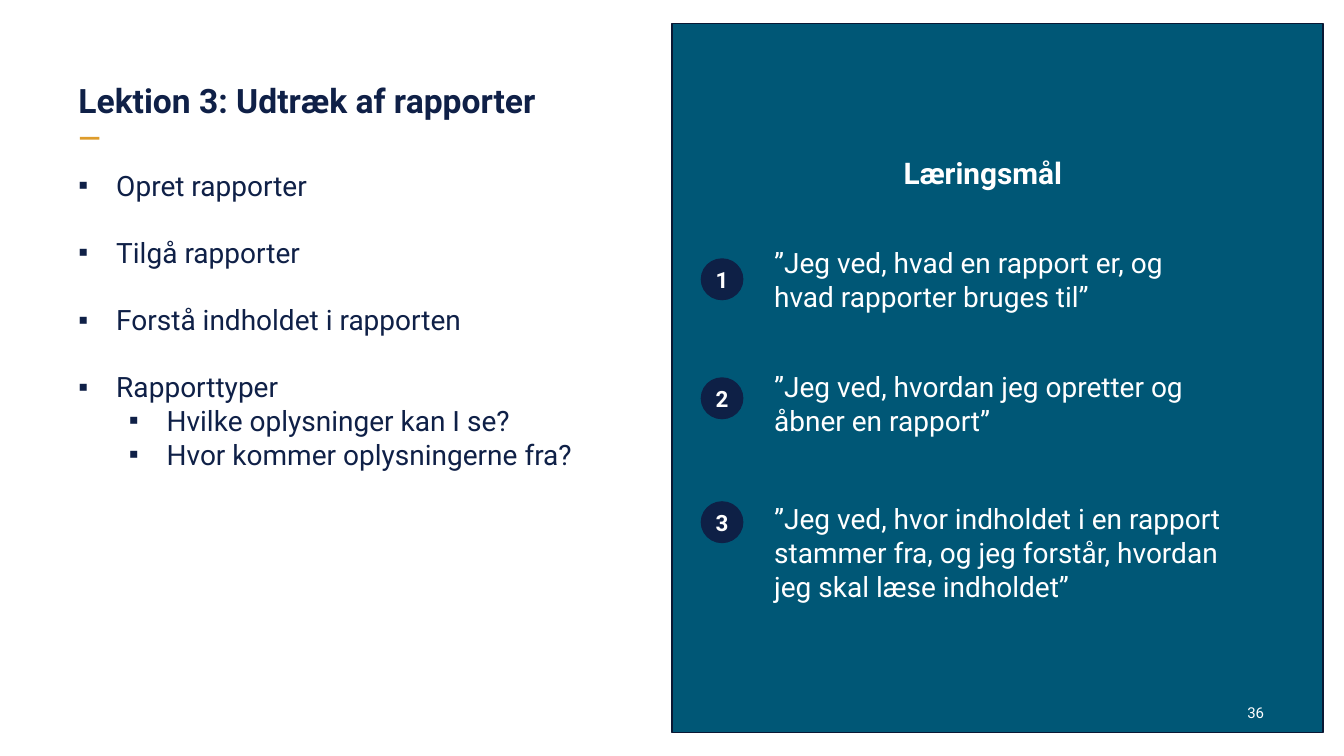
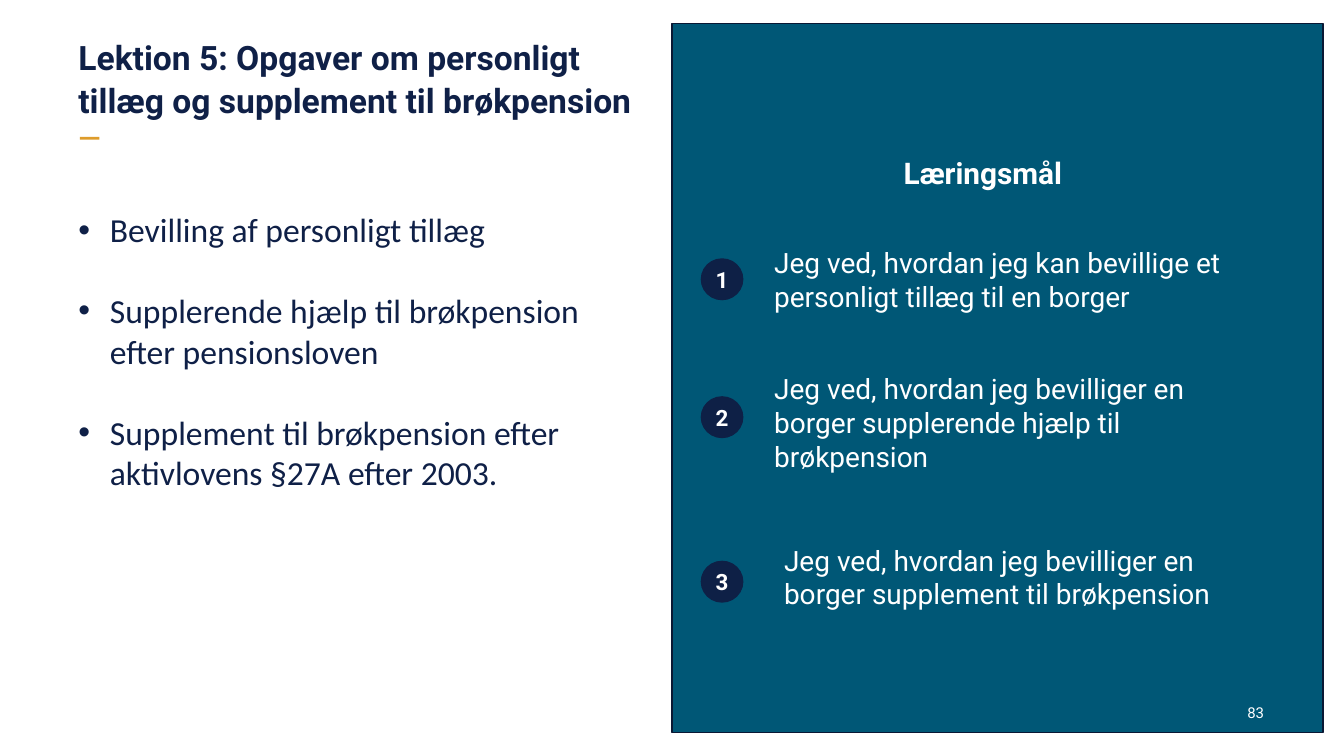
from lxml.etree import SubElement
from pptx import Presentation
from pptx.dml.color import RGBColor
from pptx.enum.shapes import MSO_SHAPE as SHAPE
from pptx.enum.text import MSO_ANCHOR as ANCHOR, MSO_AUTO_SIZE as AUTO, PP_ALIGN as ALIGN
from pptx.oxml.ns import qn
from pptx.util import Pt

NAVY, TEAL, GOLD, WHITE = "0F2047", "005776", "DE9C2B", "FFFFFF"
BADGE, PANEL_EDGE = "0E2046", "0A1834"

# Content: topics are (level, text); goals are (badge top, text left, text top, text)
SLIDES = [
    dict(
        title="Lektion 3: Udtræk af rapporter",
        number="36",
        list_top=120.2, list_font="Roboto", list_size=20, gap=24, bullet="▪", indent=27,
        topics=[
            (0, "Opret rapporter"),
            (0, "Tilgå rapporter"),
            (0, "Forstå indholdet i rapporten"),
            (0, "Rapporttyper"),
            (1, "Hvilke oplysninger kan I se?"),
            (1, "Hvor kommer oplysningerne fra?"),
        ],
        goals=[
            (185, 553, 175.7, "”Jeg ved, hvad en rapport er, og hvad rapporter bruges til”"),
            (270, 553, 264, "”Jeg ved, hvordan jeg opretter og åbner en rapport”"),
            (358.5, 553, 358.5, "”Jeg ved, hvor indholdet i en rapport stammer fra, "
                                "og jeg forstår, hvordan jeg skal læse indholdet”"),
        ],
    ),
    dict(
        title="Lektion 5: Opgaver om personligt tillæg og supplement til brøkpension",
        number="83",
        list_top=149.5, list_font="Calibri", list_size=24, gap=29, bullet="•", indent=22.5,
        topics=[
            (0, "Bevilling af personligt tillæg"),
            (0, "Supplerende hjælp til brøkpension efter pensionsloven"),
            (0, "Supplement til brøkpension efter aktivlovens §27A efter 2003."),
        ],
        goals=[
            (185, 553, 175.7, "Jeg ved, hvordan jeg kan bevillige et personligt tillæg til en borger"),
            (283.5, 553, 265.7, "Jeg ved, hvordan jeg bevilliger en borger supplerende hjælp til brøkpension"),
            (401, 560, 388, "Jeg ved, hvordan jeg bevilliger en borger supplement til brøkpension"),
        ],
    ),
]


def rgb(color):
    return RGBColor.from_string(color)


def place(s, left, top, width, height):
    s.left, s.top, s.width, s.height = Pt(left), Pt(top), Pt(width), Pt(height)


def frame(s, anchor=ANCHOR.TOP):
    tf = s.text_frame
    tf.auto_size = AUTO.NONE
    tf.word_wrap = True
    tf.margin_left = tf.margin_right = tf.margin_top = tf.margin_bottom = 0
    tf.vertical_anchor = anchor
    return tf


def write(p, text, size=20, font="Roboto", color=WHITE, bold=False, align=ALIGN.LEFT,
          before=0, spacing=None, bullet=None, indent=0, level=0):
    pPr = p._p.get_or_add_pPr()
    pPr.set("marL", str(Pt(indent + 36 * level)))
    pPr.set("indent", str(-Pt(indent)))
    if bullet:
        SubElement(pPr, qn("a:buChar")).set("char", bullet)
    else:
        SubElement(pPr, qn("a:buNone"))
    p.level, p.alignment, p.space_before = level, align, Pt(before)
    if spacing:
        p.line_spacing = Pt(spacing)
    r = p.add_run()
    r.text = text
    r.font.size, r.font.name, r.font.bold = Pt(size), font, bold
    r.font.color.rgb = rgb(color)


def add_box(slide, left, top, width, height, text, **fmt):
    s = slide.shapes.add_textbox(Pt(left), Pt(top), Pt(width), Pt(height))
    write(frame(s).paragraphs[0], text, **fmt)


def add_filled(slide, shape, left, top, width, height, fill, line=None):
    s = slide.shapes.add_shape(shape, Pt(left), Pt(top), Pt(width), Pt(height))
    s.shadow.inherit = False
    s.fill.solid()
    s.fill.fore_color.rgb = rgb(fill)
    if line:
        s.line.color.rgb = rgb(line)
        s.line.width = Pt(1)
    else:
        s.line.fill.background()
    return s


def decorate(layout, slide):
    """Draw the panel and the title dash, then move them to the shared layout."""
    for s in (
        add_filled(slide, SHAPE.RECTANGLE, 480, 16.7, 465, 506.6, TEAL, PANEL_EDGE),
        add_filled(slide, SHAPE.RECTANGLE, 57, 97.8, 14, 2, GOLD),
    ):
        layout.shapes.element.append(s.element)


def build(slide, d):
    title, topics, heading = slide.placeholders
    # Title, growing upwards from its lower edge
    place(title, 56, 24, 413, 62)
    write(frame(title, ANCHOR.BOTTOM).paragraphs[0], d["title"],
          size=24, color=NAVY, bold=True, spacing=30.7)

    # Topic list
    place(topics, 56, d["list_top"], 392, 487 - d["list_top"])
    tf = frame(topics)
    for i, (level, text) in enumerate(d["topics"]):
        p = tf.add_paragraph() if i else tf.paragraphs[0]
        write(p, text, size=d["list_size"], font=d["list_font"], color=NAVY,
              before=d["gap"] if i and level == 0 else 0,
              bullet=d["bullet"], indent=d["indent"], level=level)

    # Learning goals with numbered badges
    place(heading, 501, 110.5, 402, 30)
    write(frame(heading).paragraphs[0], "Læringsmål", size=21.3, bold=True, align=ALIGN.CENTER)
    for n, (badge_top, left, top, text) in enumerate(d["goals"], 1):
        badge = add_filled(slide, SHAPE.FLOWCHART_CONNECTOR, 501, badge_top, 29.5, 29, BADGE, BADGE)
        write(frame(badge, ANCHOR.MIDDLE).paragraphs[0], str(n),
              size=16, bold=True, align=ALIGN.CENTER)
        add_box(slide, left, top, 877 - left, 76, text)

    # Slide number
    add_box(slide, 847, 502.5, 56, 21, d["number"], size=10.7, align=ALIGN.RIGHT)


def main():
    prs = Presentation()
    prs.slide_width, prs.slide_height = Pt(960), Pt(540)
    layout = prs.slide_layouts[3]
    for i, d in enumerate(SLIDES):
        slide = prs.slides.add_slide(layout)
        if i == 0:
            decorate(layout, slide)
        build(slide, d)
    prs.save("out.pptx")


if __name__ == "__main__":
    main()
